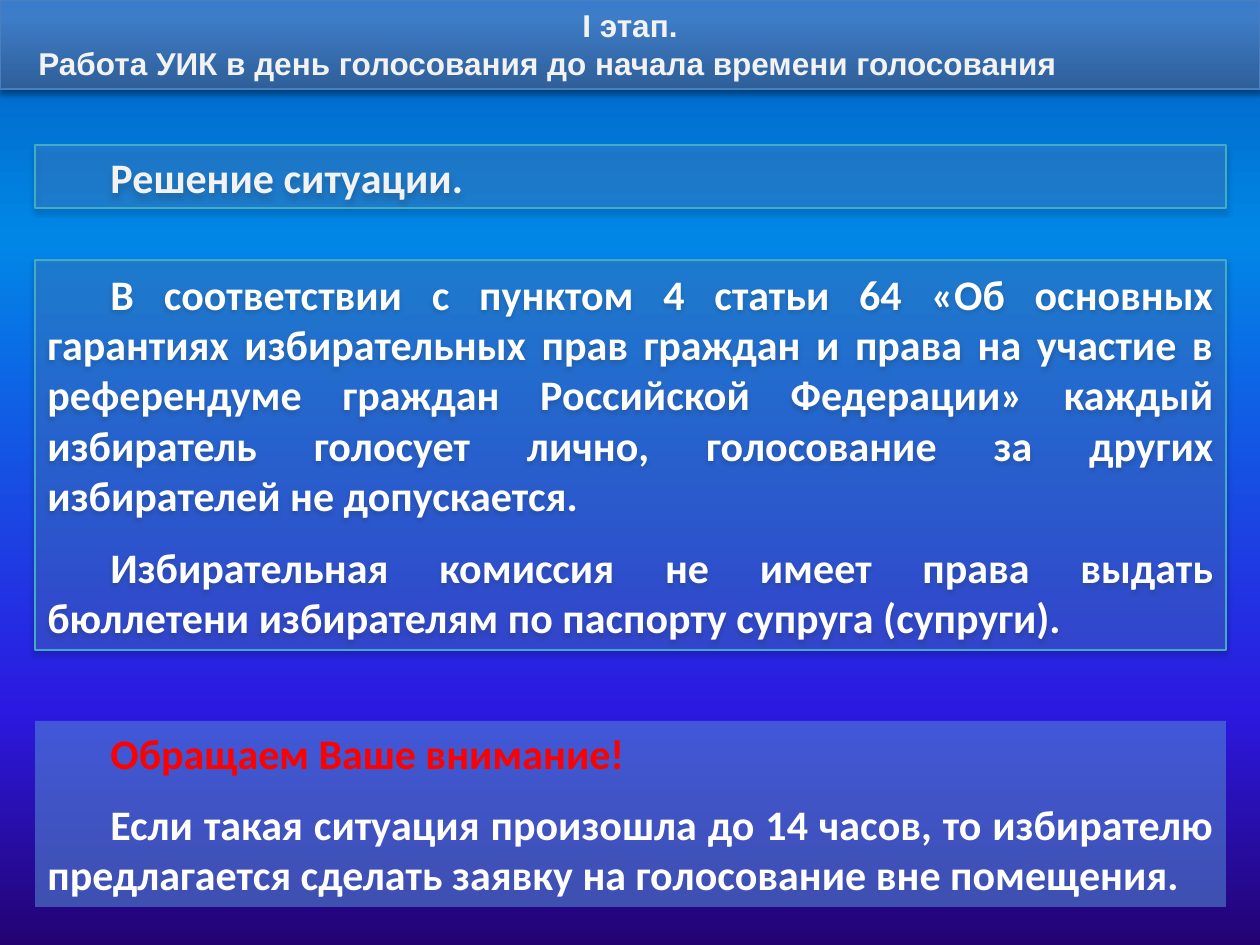
import pptx
import pptx.util
import pptx.dml.color
import pptx.enum.shapes
import pptx.enum.text
import pptx.oxml
import pptx.oxml.ns

RGB = pptx.dml.color.RGBColor
ALIGN = pptx.enum.text.PP_ALIGN
ANCHOR = pptx.enum.text.MSO_ANCHOR
Pt = pptx.util.Pt
qn = pptx.oxml.ns.qn

WHITE = RGB(0xFF, 0xFF, 0xFF)
PALE = RGB(0xF2, 0xF2, 0xF2)
RED = RGB(0xFF, 0x00, 0x00)
PANEL_BLUE = RGB(0x55, 0x8E, 0xD5)
PANEL_EDGE = RGB(0x46, 0xAA, 0xC5)
HEADER_EDGE = RGB(0x4B, 0x7E, 0xBC)
SHADOW = RGB(0x00, 0x00, 0x00)
BACKGROUND_STOPS = [
    (0, RGB(0x23, 0x03, 0x73)),
    (25, RGB(0x2C, 0x19, 0xE1)),
    (75, RGB(0x00, 0x87, 0xE6)),
    (100, RGB(0x00, 0x5C, 0xBF)),
]
HEADER_STOPS = [
    (0, RGB(0x2F, 0x5F, 0x99)),
    (80, RGB(0x3D, 0x7C, 0xC7)),
    (100, RGB(0x3A, 0x7C, 0xCB)),
]

PANEL_LEFT, PANEL_WIDTH = 35, 1191
FIRST_LINE = 63


def px(n):
    return pptx.util.Emu(round(n * 914400 / 126))


def add_color(parent, color, alpha=None):
    node = pptx.oxml.ns
    clr = parent.makeelement(qn("a:srgbClr"), {"val": str(color)})
    parent.append(clr)
    if alpha is not None:
        set_alpha(clr, alpha)


def set_alpha(clr, percent):
    clr.append(clr.makeelement(qn("a:alpha"), {"val": str(percent * 1000)}))


def fill_upward(fill, owner, stops):
    """Vertical gradient whose first stop is at the bottom."""
    fill.gradient()
    fill.gradient_angle = 90
    stop_list = owner.xpath(".//a:gsLst")[0]
    for old in list(stop_list):
        stop_list.remove(old)
    for position, color in stops:
        stop = stop_list.makeelement(qn("a:gs"), {"pos": str(position * 1000)})
        stop_list.append(stop)
        add_color(stop, color)


def add_shadow(shape):
    effects = shape._element.spPr.find(qn("a:effectLst"))
    outer = effects.makeelement(qn("a:outerShdw"), {
        "blurRad": str(Pt(3.1)), "dist": str(Pt(1.8)),
        "dir": "5400000", "rotWithShape": "0"})
    effects.append(outer)
    add_color(outer, SHADOW, 35)


def add_box(slide, left, top, width, height, edge=None, anchor=ANCHOR.TOP):
    box = slide.shapes.add_shape(pptx.enum.shapes.MSO_SHAPE.RECTANGLE,
                                 px(left), px(top), px(width), px(height))
    box.shadow.inherit = False
    if edge is None:
        box.line.fill.background()
    else:
        box.line.color.rgb = edge
        box.line.width = Pt(0.75)
        add_shadow(box)
    frame = box.text_frame
    frame.word_wrap = True
    frame.auto_size = pptx.enum.text.MSO_AUTO_SIZE.SHAPE_TO_FIT_TEXT
    frame.vertical_anchor = anchor
    return box


def write(box, lines, font, size, space=0):
    """Each line is (text, colour, alignment, first-line indent in px)."""
    frame = box.text_frame
    for i, (text, color, align, indent) in enumerate(lines):
        paragraph = frame.add_paragraph() if i else frame.paragraphs[0]
        paragraph.alignment = align
        paragraph.space_before = paragraph.space_after = Pt(space)
        if indent:
            props = paragraph._p.get_or_add_pPr()
            props.set("marL", "0")
            props.set("indent", str(px(indent)))
        run = paragraph.add_run()
        run.text = text
        run.font.name = font
        run.font.size = Pt(size)
        run.font.bold = True
        run.font.color.rgb = color


def add_panel(slide, top, height, opacity, lines, edge=None,
              anchor=ANCHOR.TOP, space=6):
    panel = add_box(slide, PANEL_LEFT, top, PANEL_WIDTH, height, edge, anchor)
    panel.fill.solid()
    panel.fill.fore_color.rgb = PANEL_BLUE
    set_alpha(panel._element.spPr.xpath("./a:solidFill/a:srgbClr")[0], opacity)
    write(panel, [(text, color, ALIGN.JUSTIFY, FIRST_LINE)
                  for text, color in lines], "Calibri", 24, space)


def main():
    deck = pptx.Presentation()
    deck.slide_width, deck.slide_height = px(1260), px(945)
    slide = deck.slides.add_slide(deck.slide_layouts[6])
    fill_upward(slide.background.fill, slide._element, BACKGROUND_STOPS)

    # Header band
    header = add_box(slide, 0, 0, 1260, 89, HEADER_EDGE)
    fill_upward(header.fill, header._element, HEADER_STOPS)
    write(header, [
        ("I\u00a0этап.", PALE, ALIGN.CENTER, 0),
        ("Работа УИК в день голосования до начала времени голосования",
         PALE, ALIGN.LEFT, 26),
    ], "Arial", 18)

    # Legal ground
    add_panel(slide, 260, 390, 33, [
        ("В соответствии с пунктом 4 статьи 64 «Об основных гарантиях "
         "избирательных прав граждан и права на участие в референдуме граждан "
         "Российской Федерации» каждый избиратель голосует лично, голосование "
         "за других избирателей не допускается.", WHITE),
        ("Избирательная комиссия не имеет права выдать бюллетени избирателям "
         "по паспорту супруга (супруги).", WHITE),
    ], PANEL_EDGE, ANCHOR.MIDDLE)

    # Section title
    add_panel(slide, 145, 63, 33, [("Решение ситуации.", PALE)],
              PANEL_EDGE, ANCHOR.MIDDLE, space=0)

    # Warning
    add_panel(slide, 721, 186, 54, [
        ("Обращаем Ваше внимание!", RED),
        ("Если такая ситуация произошла до 14 часов, то избирателю "
         "предлагается сделать заявку на голосование вне помещения.", WHITE),
    ])

    deck.save("out.pptx")


if __name__ == "__main__":
    main()
